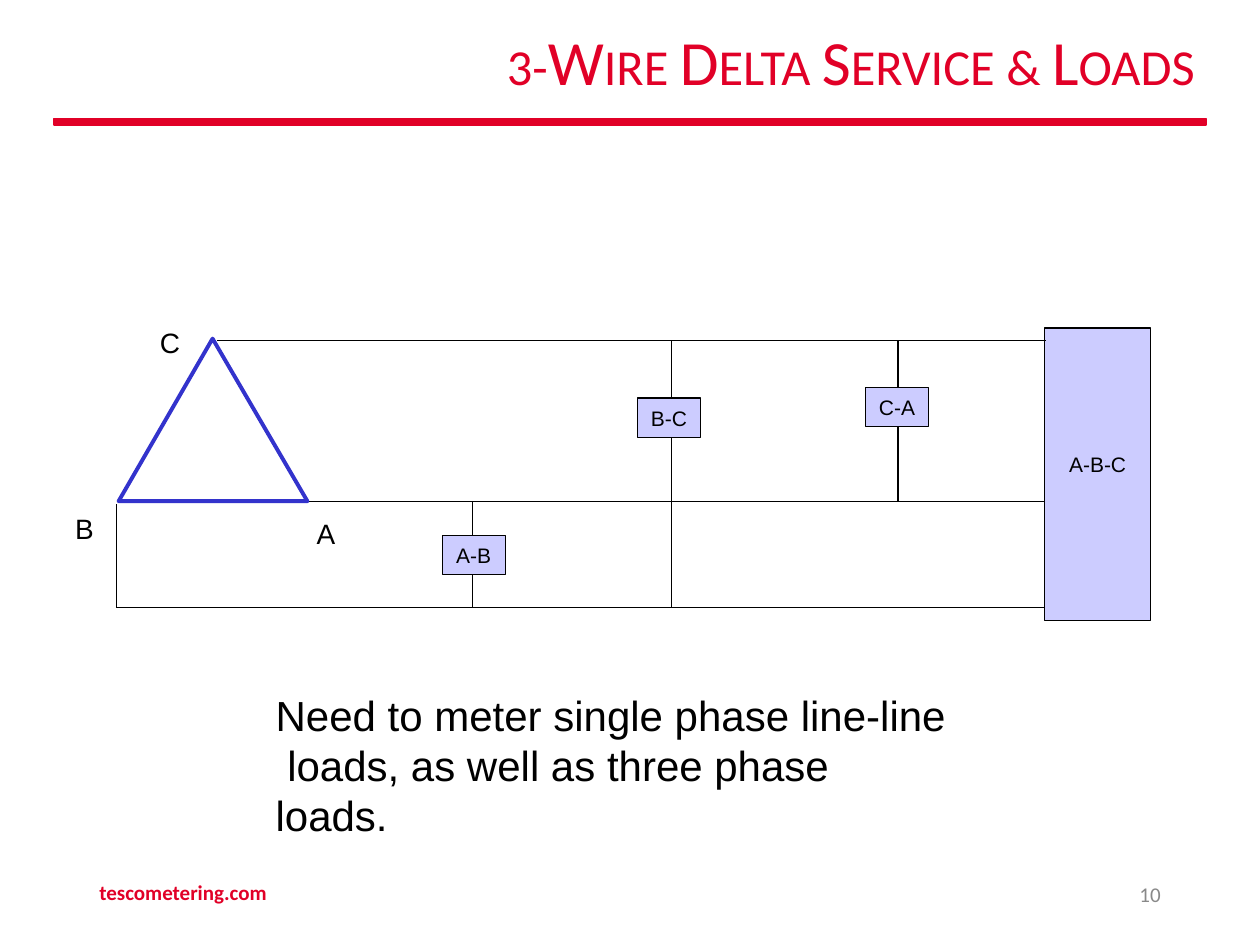
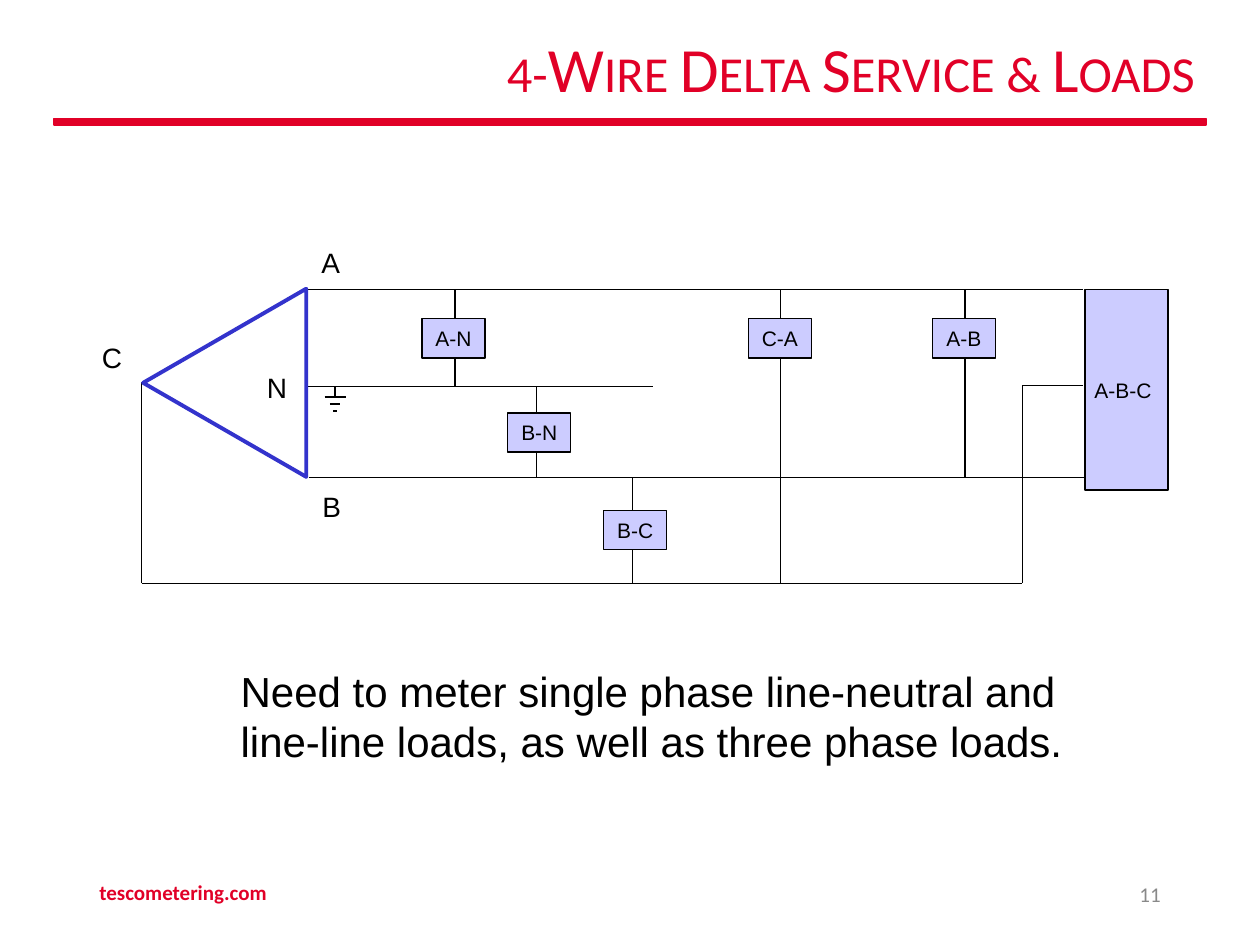
"""Builds two slides on metering of 3-wire and 4-wire delta services."""
from lxml import etree
from pptx import Presentation
from pptx.dml.color import RGBColor
from pptx.enum.shapes import MSO_CONNECTOR, MSO_SHAPE
from pptx.enum.text import MSO_ANCHOR, PP_ALIGN
from pptx.oxml.ns import qn
from pptx.util import Pt

LEFT, CENTER, RIGHT = PP_ALIGN.LEFT, PP_ALIGN.CENTER, PP_ALIGN.RIGHT
TOP, MIDDLE = MSO_ANCHOR.TOP, MSO_ANCHOR.MIDDLE
RECTANGLE, STRAIGHT = MSO_SHAPE.RECTANGLE, MSO_CONNECTOR.STRAIGHT

COLORS = {"brand": "E10027", "ink": "000000", "load": "CCCCFF",
          "winding": "3333CC", "number": "898989"}
HEADING_FONT, BODY_FONT = "Calibri", "Arial"
WIRE_WIDTH, WINDING_WIDTH = 0.72, 2.25
LOAD_SIZE = (36, 22.4)

RULE_BOX = (31, 67.7, 658, 3.6)
SITE_BOX = (49.7, 499, 243.4, 28.8)
NUMBER_BOX = (508.3, 500.4, 162, 28.8)

THREE_WIRE = {
    "wires": [(82, 12.4, 556, 12.4), (134.6, 104.8, 555, 104.8),
              (24.8, 165.2, 555, 165.2), (24.8, 106, 24.8, 165.2)],
    "winding": [(79.5, 11.5), (133.7, 104.4), (25.8, 104.4)],
    "block": (555, 5.5, 60.5, 167.3),
    "block_insets": (0, 0, 0, 12),
    "loads": [("A-B", 210.7, 124, 228, 104.8, 165.2),
              ("B-C", 322.3, 45.5, 341.8, 12.4, 165.2),
              ("C-A", 452.6, 39.5, 471.2, 12.4, 104.8)],
    "labels": [("A", 139, 113), ("B", 1, 110.5), ("C", 49.4, 4)],
}
FOUR_WIRE = {
    "wires": [(118, 28.6, 562, 28.6), (118.7, 84, 316, 84),
              (119.4, 135.7, 563, 135.7), (24, 196.4, 527.3, 196.4),
              (24, 81.5, 24, 196.4), (527.3, 83.5, 527.3, 196.4),
              (527.3, 83.5, 562, 83.5)],
    "winding": [(118, 28), (118, 135.5), (24.8, 81.8)],
    "block": (563, 28.6, 47.5, 114.5),
    "block_insets": (0, 0, 4, 0),
    "loads": [("A-N", 184.2, 45.2, 203, 28.6, 84),
              ("B-N", 233.2, 99, 249.7, 84, 135.7),
              ("B-C", 288, 154.6, 304.5, 135.7, 196.4),
              ("C-A", 370.7, 45.2, 389.2, 28.6, 196.4),
              ("A-B", 475.8, 45.2, 494.4, 28.6, 135.7)],
    "labels": [("A", 126.6, 3.4), ("B", 127.3, 143), ("C", 1.2, 57.7),
               ("N", 95.6, 75)],
}


def color(name):
    """Return the palette colour of this name."""
    return RGBColor.from_string(COLORS[name])


def set_text(shape, lines, font, size, ink, align=LEFT, anchor=TOP,
             insets=(0, 0, 0, 0), bold=False):
    """Write one paragraph per line in a single style."""
    frame = shape.text_frame
    frame.word_wrap = True
    frame.vertical_anchor = anchor
    (frame.margin_left, frame.margin_top,
     frame.margin_right, frame.margin_bottom) = map(Pt, insets)
    frame.text = "\n".join(lines)
    for paragraph in frame.paragraphs:
        paragraph.alignment = align
        paragraph.font.name = font
        paragraph.font.size = Pt(size)
        paragraph.font.bold = bold
        paragraph.font.color.rgb = color(ink)
    return frame.paragraphs


def add_text(slide, box, *args, **style):
    """Add a text box and return its paragraphs."""
    shape = slide.shapes.add_textbox(*map(Pt, box))
    return set_text(shape, *args, **style)


def add_rectangle(slide, box, fill, line, width):
    """Add a flat rectangle with an outline."""
    shape = slide.shapes.add_shape(RECTANGLE, *map(Pt, box))
    shape.shadow.inherit = False
    shape.fill.solid()
    shape.fill.fore_color.rgb = color(fill)
    shape.line.color.rgb = color(line)
    shape.line.width = Pt(width)
    return shape


def add_wire(slide, origin, wire):
    """Draw a straight wire given relative to the origin."""
    left, top = origin
    x1, y1, x2, y2 = wire
    connector = slide.shapes.add_connector(
        STRAIGHT, Pt(left + x1), Pt(top + y1), Pt(left + x2), Pt(top + y2))
    connector.line.color.rgb = color("ink")
    connector.line.width = Pt(WIRE_WIDTH)
    etree.SubElement(connector._element.spPr, qn("a:effectLst"))


def add_winding(slide, origin, corners):
    """Draw the delta winding as an open triangle outline."""
    points = [(Pt(origin[0] + x), Pt(origin[1] + y)) for x, y in corners]
    builder = slide.shapes.build_freeform(*points[0], scale=1.0)
    builder.add_line_segments(points[1:], close=True)
    shape = builder.convert_to_shape()
    shape.shadow.inherit = False
    shape.fill.background()
    shape.line.color.rgb = color("winding")
    shape.line.width = Pt(WINDING_WIDTH)


def add_load(slide, origin, box, name, insets=(0, 0, 0, 0)):
    """Add a named load box relative to the origin."""
    x, y, width, height = box
    shape = add_rectangle(slide, (origin[0] + x, origin[1] + y, width, height),
                          "load", "ink", WIRE_WIDTH)
    set_text(shape, [name], BODY_FONT, 12, "ink", CENTER, MIDDLE, insets)


def add_circuit(slide, origin, circuit):
    """Draw a delta service with its wires, loads and phase labels."""
    add_load(slide, origin, circuit["block"], "A-B-C", circuit["block_insets"])
    for wire in circuit["wires"]:
        add_wire(slide, origin, wire)
    for name, x, y, stem, start, end in circuit["loads"]:
        add_load(slide, origin, (x, y, *LOAD_SIZE), name)
        add_wire(slide, origin, (stem, start, stem, y))
        add_wire(slide, origin, (stem, y + LOAD_SIZE[1], stem, end))
    add_winding(slide, origin, circuit["winding"])
    for name, x, y in circuit["labels"]:
        add_text(slide, (origin[0] + x, origin[1] + y, 16, 20), [name],
                 BODY_FONT, 16, "ink")


def add_ground(slide, origin):
    """Draw an earth symbol hanging from the origin."""
    add_wire(slide, origin, (0, 0, 0, 5.8))
    for row, half_width in enumerate((6, 3, 1)):
        y = 5.8 + 4 * row
        add_wire(slide, origin, (-half_width, y, half_width, y))


def add_frame(slide, title, title_box, number):
    """Add the title, the rule below it and the footer."""
    add_rectangle(slide, RULE_BOX, "brand", "brand", 1)
    insets = (7.2, 3.6, 7.2, 3.6)
    heading = add_text(slide, title_box, [title], HEADING_FONT, 36, "brand",
                       align=RIGHT, anchor=MIDDLE, insets=insets)[0]
    heading.line_spacing = 0.9
    heading.runs[0]._r.get_or_add_rPr().set("cap", "small")
    add_text(slide, SITE_BOX, ["tescometering.com"], HEADING_FONT, 12, "brand",
             insets=insets, bold=True)
    add_text(slide, NUMBER_BOX, [number], HEADING_FONT, 12, "number",
             align=RIGHT, insets=insets)


def add_caption(slide, box, lines, last_indent=0):
    """Add the summary text, optionally indenting its last paragraph."""
    paragraphs = add_text(slide, box, lines, BODY_FONT, 24, "ink")
    for paragraph in paragraphs:
        paragraph.line_spacing = Pt(28.6)
    paragraphs[-1]._p.get_or_add_pPr().set("indent", str(Pt(last_indent)))


def build_three_wire(slide):
    """Fill the 3-wire slide."""
    add_frame(slide, "3-Wire Delta Service & Loads",
              (122.4, 10.8, 567.4, 53.3), "10")
    add_circuit(slide, (42, 182), THREE_WIRE)
    add_caption(slide, (157.5, 394, 384, 88),
                ["Need to meter single phase line-line",
                 "loads, as well as three phase loads."], last_indent=6.7)


def build_four_wire(slide):
    """Fill the 4-wire slide."""
    add_frame(slide, "4-Wire Delta Service & Loads",
              (122.4, 14.5, 567.4, 53.3), "11")
    add_circuit(slide, (57, 137), FOUR_WIRE)
    add_ground(slide, (191.5, 221))
    add_caption(slide, (137.5, 380.7, 480, 58),
                ["Need to meter single phase line-neutral and",
                 "line-line loads, as well as three phase loads."])


def main():
    """Build and save the presentation."""
    presentation = Presentation()
    presentation.slide_width, presentation.slide_height = Pt(720), Pt(540)
    for build in (build_three_wire, build_four_wire):
        build(presentation.slides.add_slide(presentation.slide_layouts[6]))
    presentation.save("out.pptx")


if __name__ == "__main__":
    main()
